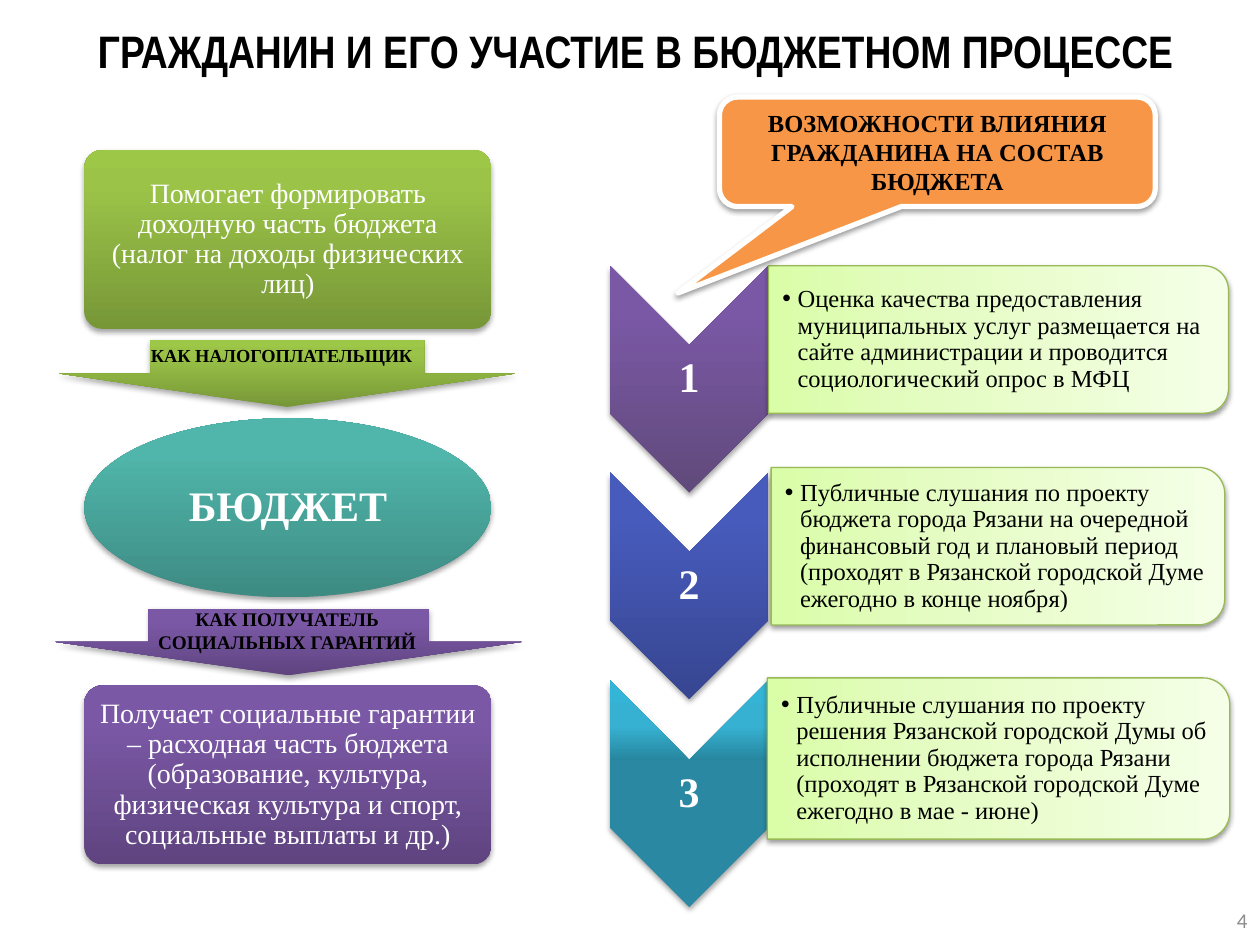
from dataclasses import dataclass

from lxml.etree import SubElement
from pptx import Presentation
from pptx.dml.color import RGBColor
from pptx.enum.shapes import MSO_SHAPE
from pptx.enum.text import MSO_ANCHOR, MSO_AUTO_SIZE, PP_ALIGN
from pptx.oxml import parse_xml
from pptx.oxml.ns import nsdecls, qn
from pptx.util import Inches, Pt


@dataclass(frozen=True)
class Theme:
    serif: str = "Times New Roman"
    narrow: str = "Arial Narrow"
    sans: str = "Calibri"
    black: str = "000000"
    white: str = "FFFFFF"
    gray: str = "8C8C8C"
    orange: str = "F79646"
    edge: str = "98B955"
    green: tuple = ((0, "779737"), (80, "9BC348"), (100, "9DC746"))
    teal: tuple = ((0, "3D8B83"), (80, "50B5AA"), (100, "4EB8AC"))
    purple: tuple = ((0, "5F4480"), (80, "7B58A6"), (100, "7C57A8"))
    plum: tuple = ((0, "604A7B"), (80, "7B58A6"), (100, "7C57A8"))
    blue: tuple = ((0, "374691"), (80, "475BBC"), (100, "455ABF"))
    cyan: tuple = ((0, "2A88A2"), (65, "2787A0"), (80, "37B1D2"), (100, "34B4D6"))
    pale: tuple = ((0, "DAFDA7"), (35, "E4FCC2"), (100, "F5FFE7"))
    head: float = 26
    big: float = 24
    block: float = 16
    item: float = 14
    note: float = 12
    label: float = 11
    small: float = 10.5


@dataclass(frozen=True)
class Box:
    left: float
    top: float
    width: float
    height: float

    def inset(self, dx: float, dy: float) -> "Box":
        return Box(self.left + dx, self.top + dy,
                   self.width - 2 * dx, self.height - 2 * dy)

    def turned(self) -> "Box":
        """Frame that covers this box once rotated by 90 degrees."""
        gap = (self.width - self.height) / 2
        return Box(self.left + gap, self.top - gap, self.height, self.width)

    def emu(self) -> list:
        return [Inches(v) for v in (self.left, self.top, self.width, self.height)]


@dataclass(frozen=True)
class Step:
    top: float
    tint: tuple
    card: Box
    text: str


@dataclass(frozen=True)
class Block:
    kind: MSO_SHAPE
    top: float
    tint: tuple
    text: str
    size: float
    bold: bool
    pad: tuple
    inset: float


T = Theme()

STEPS = [
    Step(2.11, T.plum, Box(6.1, 2.11, 3.65, 1.17),
         "Оценка качества предоставления муниципальных услуг размещается на сайте "
         "администрации и проводится социологический опрос в МФЦ"),
    Step(3.75, T.blue, Box(6.12, 3.71, 3.6, 1.25),
         "Публичные слушания по проекту бюджета города Рязани на очередной финансовый "
         "год и плановый период (проходят в Рязанской городской Думе ежегодно в конце ноября)"),
    Step(5.4, T.cyan, Box(6.09, 5.38, 3.67, 1.28),
         "Публичные слушания по проекту решения Рязанской городской Думы об исполнении "
         "бюджета города Рязани (проходят в Рязанской городской Думе ежегодно в мае - июне)"),
]
BLOCKS = [
    Block(MSO_SHAPE.ROUNDED_RECTANGLE, 1.19, T.green,
          "Помогает формировать доходную часть бюджета (налог на доходы физических лиц)",
          T.block, False, (0.04, 0.04), 0.07),
    Block(MSO_SHAPE.OVAL, 3.32, T.teal, "БЮДЖЕТ", T.big, True, (0.47, 0.21), 0.1),
    Block(MSO_SHAPE.ROUNDED_RECTANGLE, 5.44, T.purple,
          "Получает социальные гарантии – расходная часть бюджета (образование, "
          "культура, физическая культура и спорт, социальные выплаты и др.)",
          T.block, False, (0.04, 0.04), 0.07),
]
ARROWS = [(Box(0.47, 2.7, 3.62, 0.53), T.green), (Box(0.44, 4.83, 3.7, 0.53), T.purple)]


def shade(shape, alpha: int, dist: float) -> None:
    shape.shadow.inherit = False
    fx = shape._element.spPr.find(qn("a:effectLst"))
    fx.append(parse_xml(
        f'<a:outerShdw {nsdecls("a")} blurRad="{Pt(3.1)}" dist="{Pt(dist)}" '
        f'dir="5400000" rotWithShape="0"><a:srgbClr val="{T.black}">'
        f'<a:alpha val="{alpha * 1000}"/></a:srgbClr></a:outerShdw>'))


def blend(shape, stops: tuple, spin: bool) -> None:
    marks = "".join(f'<a:gs pos="{pos * 1000}"><a:srgbClr val="{tone}"/></a:gs>'
                    for pos, tone in stops)
    shape._element.spPr.find(qn("a:prstGeom")).addnext(parse_xml(
        f'<a:gradFill {nsdecls("a")} rotWithShape="{int(spin)}"><a:gsLst>{marks}'
        '</a:gsLst><a:lin ang="16200000" scaled="0"/></a:gradFill>'))


def draw(slide, kind, box: Box, stops: tuple = (), turn: bool = False,
         adj: tuple = (), edge: str = "", wide: float = 0.75, spin: bool = False):
    frame = box.turned() if turn else box
    shape = slide.shapes.add_shape(kind, *frame.emu())
    shape.rotation = 90 if turn else 0
    for i, value in enumerate(adj):
        shape.adjustments[i] = value
    if stops:
        blend(shape, stops, spin)
    if edge:
        shape.line.color.rgb = RGBColor.from_string(edge)
        shape.line.width = Pt(wide)
    else:
        shape.line.fill.background()
    shade(shape, 38 if edge else 35, 1.6 if edge else 1.8)
    return shape


def write(shape, text: str, size: float, tone: str, font: str = T.serif,
          bold: bool = False, align=PP_ALIGN.CENTER, anchor=MSO_ANCHOR.MIDDLE,
          pad: tuple = (0.1, 0.05, 0.1, 0.05), lead: float = 1.0, bullet: bool = False):
    frame = shape.text_frame
    frame.word_wrap = True
    frame.auto_size = MSO_AUTO_SIZE.NONE
    frame.vertical_anchor = anchor
    (frame.margin_left, frame.margin_top,
     frame.margin_right, frame.margin_bottom) = [Inches(v) for v in pad]
    frame.text = text
    para = frame.paragraphs[0]
    para.alignment, para.line_spacing, para.space_before = align, lead, Pt(0)
    if bullet:
        props = para._p.get_or_add_pPr()
        props.set("marL", str(Inches(0.12)))
        props.set("indent", str(Inches(-0.12)))
        SubElement(props, qn("a:buChar")).set("char", "•")
    para.font.size, para.font.name, para.font.bold = Pt(size), font, bold
    para.font.color.rgb = RGBColor.from_string(tone)


def label(slide, box: Box, text: str, size: float, tone: str, **style) -> None:
    write(slide.shapes.add_textbox(*box.emu()), text, size, tone, **style)


def place(slide, shape, box: Box) -> None:
    """Move a placeholder to a box, in front of what is drawn so far."""
    shape.left, shape.top, shape.width, shape.height = box.emu()
    slide.shapes._spTree.append(shape._element)


def main() -> None:
    deck = Presentation()
    deck.slide_width, deck.slide_height = Inches(10), Inches(7.5)
    slide = deck.slides.add_slide(deck.slide_layouts[4])
    title, *lists, spare = slide.placeholders
    spare._element.getparent().remove(spare._element)

    # Numbered steps with their cards
    for num, (step, body) in enumerate(zip(STEPS, lists), 1):
        draw(slide, MSO_SHAPE.CHEVRON, Box(4.84, step.top, 1.26, 1.8), step.tint, turn=True)
        label(slide, Box(4.84, step.top + 0.63, 1.26, 0.54), str(num), T.big, T.white,
              bold=True, pad=(0.02,) * 4, lead=0.9)
        card = step.card
        draw(slide, MSO_SHAPE.ROUND_2_SAME_RECTANGLE, card, T.pale, turn=True,
             edge=T.edge, spin=True)
        place(slide, body, Box(card.left, card.top + 0.06, card.width - 0.06, card.height - 0.12))
        write(body, step.text, T.item, T.black, align=PP_ALIGN.LEFT,
              pad=(0.11, 0.01, 0.01, 0.01), lead=0.9, bullet=True)

    # Callout above the steps
    call = draw(slide, MSO_SHAPE.ROUNDED_RECTANGULAR_CALLOUT, Box(5.71, 0.77, 3.46, 0.87),
                adj=(-0.595, 1.288, 0.167), edge=T.white, wide=3)
    call.fill.solid()
    call.fill.fore_color.rgb = RGBColor.from_string(T.orange)
    write(call, "ВОЗМОЖНОСТИ ВЛИЯНИЯ ГРАЖДАНИНА НА СОСТАВ БЮДЖЕТА", T.item, T.black, bold=True)

    # Budget flow on the left
    for part in BLOCKS:
        box = Box(0.67, part.top, 3.23, 1.42)
        adj = () if part.kind == MSO_SHAPE.OVAL else (0.1,)
        draw(slide, part.kind, box, part.tint, adj=adj)
        label(slide, box.inset(*part.pad), part.text, part.size, T.white,
              bold=part.bold, pad=(part.inset,) * 4, lead=0.9)
    for box, tint in ARROWS:
        draw(slide, MSO_SHAPE.RIGHT_ARROW, box, tint, turn=True, adj=(0.6, 0.5))
    label(slide, Box(1.1, 2.68, 2.44, 0.28), "КАК НАЛОГОПЛАТЕЛЬЩИК", T.small, T.black,
          bold=True, align=PP_ALIGN.LEFT, anchor=MSO_ANCHOR.TOP)
    label(slide, Box(1.06, 4.77, 2.44, 0.47), "КАК ПОЛУЧАТЕЛЬ СОЦИАЛЬНЫХ ГАРАНТИЙ",
          T.label, T.black, bold=True, anchor=MSO_ANCHOR.TOP)

    # Title and page number
    place(slide, title, Box(0.55, 0.13, 9, 0.47))
    write(title, "ГРАЖДАНИН И ЕГО УЧАСТИЕ В БЮДЖЕТНОМ ПРОЦЕССЕ", T.head, T.black,
          font=T.narrow, bold=True, anchor=MSO_ANCHOR.TOP)
    label(slide, Box(7.67, 7.1, 2.33, 0.4), "4", T.note, T.gray,
          font=T.sans, align=PP_ALIGN.RIGHT)
    deck.save("out.pptx")


if __name__ == "__main__":
    main()
